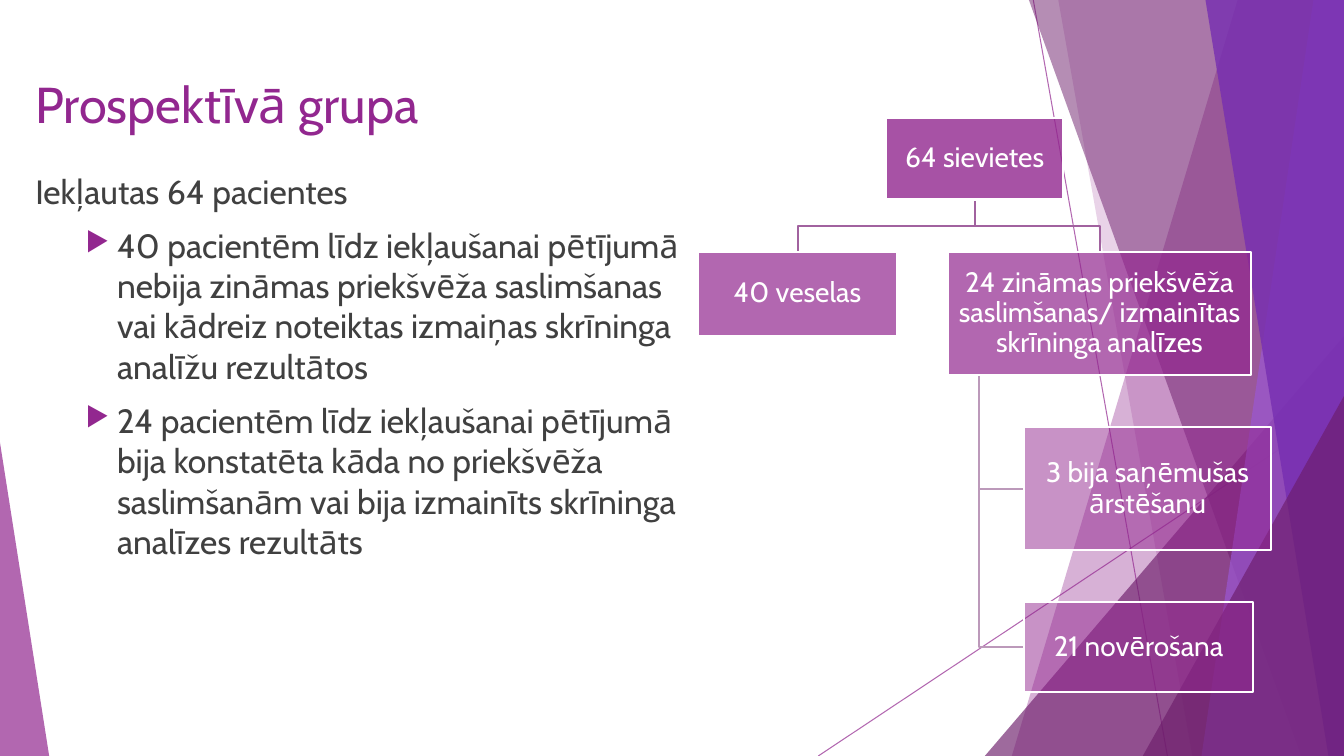
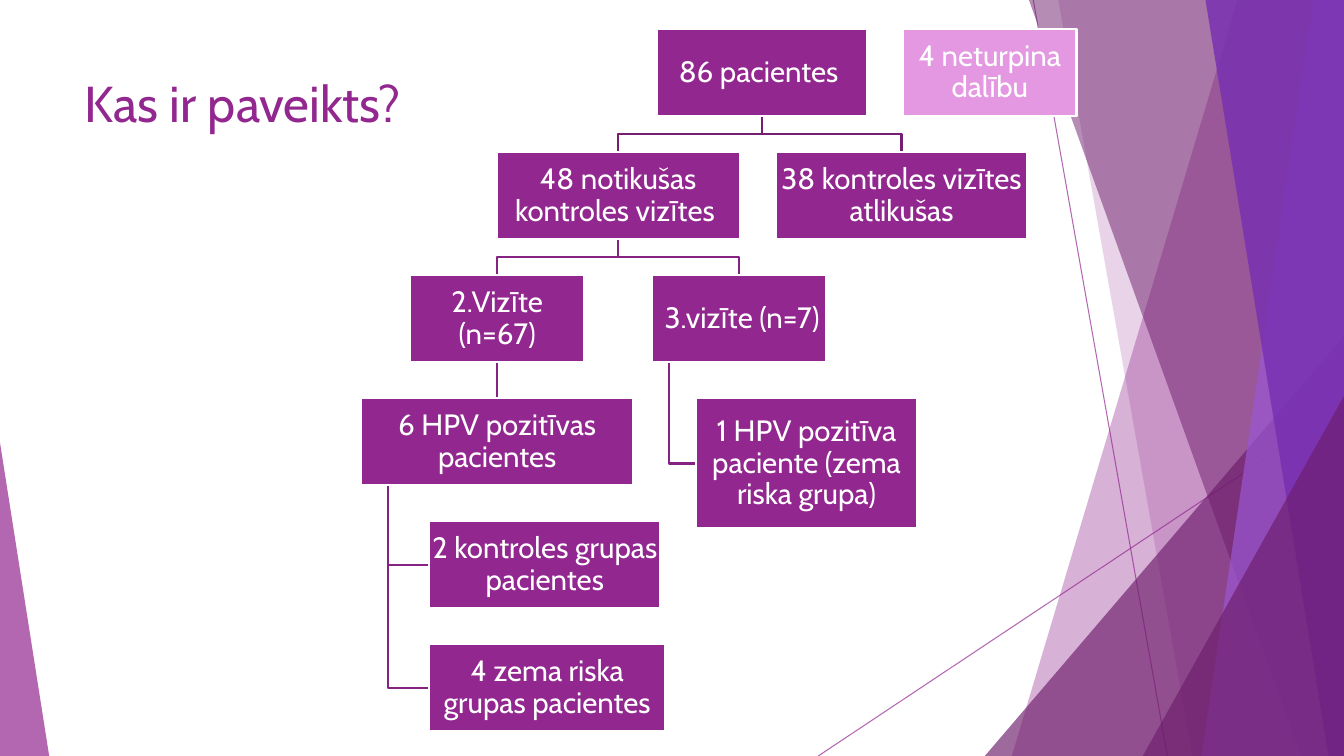
from dataclasses import dataclass
from typing import Optional

from lxml.etree import SubElement
from pptx import Presentation
from pptx.dml.color import RGBColor
from pptx.enum.shapes import MSO_CONNECTOR, MSO_SHAPE
from pptx.enum.text import MSO_ANCHOR, PP_ALIGN
from pptx.oxml.ns import qn
from pptx.util import Cm, Pt

FONT = "Cabin"
PURPLE, DARK, VIOLET, INDIGO = "92278F", "6D1D6B", "9B57D3", "762EB1"
PINK, WHITE, GREY = "E498E1", "FFFFFF", "404040"
WIDTH, HEIGHT = 33.87, 19.05


@dataclass
class Band:
    """A facet that runs from the top edge to the bottom along the right side."""
    top_x: float
    bottom_x: float
    color: str
    alpha: int


@dataclass
class Corner:
    """A right triangle standing on the bottom edge."""
    left: float
    top: float
    width: float
    apex: float
    color: str
    alpha: int


@dataclass
class Box:
    text: str
    left: float
    top: float
    width: float
    height: float
    color: str = PURPLE
    alpha: int = 100
    parent: Optional["Box"] = None
    link: str = ""
    hangs: bool = False

    @property
    def center(self) -> float:
        return self.left + self.width / 2

    @property
    def bottom(self) -> float:
        return self.top + self.height


FACETS = [
    Band(31.19, 25.5, PURPLE, 36),
    Band(26.67, 30.05, PURPLE, 20),
    Corner(24.82, 8.47, 9.05, 1, DARK, 66),
    Band(25.93, 32.79, DARK, 50),
    Band(33.1, 30.28, VIOLET, 70),
    Band(30.38, 33.48, INDIGO, 80),
    Corner(28.8, 9.98, 5.07, 1, DARK, 66),
    Corner(0, 11.15, 1.24, 0, PURPLE, 70),
]


# Shared helpers
def rgb(color: str) -> RGBColor:
    return RGBColor.from_string(color)


def fade(sp, alpha: int) -> None:
    if alpha < 100:
        clr = sp.element.xpath(".//a:srgbClr")[0]
        SubElement(clr, qn("a:alpha")).set("val", str(alpha * 1000))


def fill(sp, color: str, alpha: int) -> None:
    sp.shadow.inherit = False
    sp.fill.solid()
    sp.fill.fore_color.rgb = rgb(color)
    fade(sp, alpha)


def add_run(p, text: str, size: float, color: str) -> None:
    r = p.add_run()
    r.text = text
    r.font.name, r.font.size = FONT, Pt(size)
    r.font.color.rgb = rgb(color)


def add_line(s, x1: float, y1: float, x2: float, y2: float,
             color: str, width: float, alpha: int = 100) -> None:
    ln = s.shapes.add_connector(MSO_CONNECTOR.STRAIGHT, Cm(x1), Cm(y1), Cm(x2), Cm(y2))
    ln.line.color.rgb = rgb(color)
    ln.line.width = Pt(width)
    fade(ln, alpha)
    SubElement(ln.element.spPr, qn("a:effectLst"))


def add_path(s, points: list[tuple[float, float]], close: bool):
    pts = [(Cm(x), Cm(y)) for x, y in points]
    fb = s.shapes.build_freeform(*pts[0])
    fb.add_line_segments(pts[1:], close=close)
    return fb.convert_to_shape()


def add_textbox(s, left: float, top: float, width: float, height: float):
    tf = s.shapes.add_textbox(Cm(left), Cm(top), Cm(width), Cm(height)).text_frame
    tf.word_wrap = True
    return tf


# Backdrop and title
def add_backdrop(s) -> None:
    add_line(s, 26.04, 0, 29.42, HEIGHT, PURPLE, 0.75, 70)
    add_line(s, WIDTH, 10.24, 20.62, HEIGHT, PURPLE, 0.75, 70)
    for f in FACETS:
        if isinstance(f, Band):
            sp = add_path(s, [(f.top_x, 0), (WIDTH, 0), (WIDTH, HEIGHT),
                              (f.bottom_x, HEIGHT)], True)
        else:
            sp = s.shapes.add_shape(MSO_SHAPE.ISOSCELES_TRIANGLE, Cm(f.left), Cm(f.top),
                                    Cm(f.width), Cm(HEIGHT - f.top))
            sp.adjustments[0] = f.apex
        fill(sp, f.color, f.alpha)
        sp.line.fill.background()


def add_slide(prs, title: str, left: float, top: float, width: float):
    s = prs.slides.add_slide(prs.slide_layouts[6])
    add_backdrop(s)
    tf = add_textbox(s, left, top, width, 3.66)
    add_run(tf.paragraphs[0], title, 36, PURPLE)
    return s


# Body text
def add_bullet(p) -> None:
    pPr = p._p.get_or_add_pPr()
    pPr.set("marL", str(Cm(2.06)))
    pPr.set("indent", str(Cm(-0.79)))
    clr = SubElement(pPr, qn("a:buClr"))
    SubElement(clr, qn("a:srgbClr")).set("val", PURPLE)
    SubElement(pPr, qn("a:buSzPct")).set("val", "80000")
    SubElement(pPr, qn("a:buChar")).set("char", "▶")


def add_body(s, lead: str, bullets: list[str]) -> None:
    tf = add_textbox(s, 0.64, 4.17, 16.71, 13.16)
    for i, text in enumerate([lead] + bullets):
        p = tf.add_paragraph() if i else tf.paragraphs[0]
        p.space_before = Pt(10)
        if i:
            add_bullet(p)
        add_run(p, text, 24, GREY)


# Organisation chart
def add_link(s, box: Box) -> None:
    up = box.parent
    if box.hangs:
        x, y = up.left + up.width / 10, box.top + box.height / 2
        points = [(x, up.bottom), (x, y), (box.left, y)]
    elif abs(up.center - box.center) < 0.05:
        add_line(s, up.center, up.bottom, up.center, box.top, box.link, 1.5)
        return
    else:
        y = (up.bottom + box.top) / 2
        points = [(up.center, up.bottom), (up.center, y), (box.center, y),
                  (box.center, box.top)]
    sp = add_path(s, points, False)
    sp.shadow.inherit = False
    sp.fill.background()
    sp.line.color.rgb = rgb(box.link)
    sp.line.width = Pt(1.5)


def add_box(s, box: Box, size: float) -> None:
    sp = s.shapes.add_shape(MSO_SHAPE.RECTANGLE, Cm(box.left), Cm(box.top),
                            Cm(box.width), Cm(box.height))
    fill(sp, box.color, box.alpha)
    sp.line.color.rgb = rgb(WHITE)
    sp.line.width = Pt(1.5)
    tf = sp.text_frame
    tf.word_wrap = True
    tf.vertical_anchor = MSO_ANCHOR.MIDDLE
    tf.margin_left = tf.margin_right = tf.margin_top = tf.margin_bottom = Cm(0.03)
    p = tf.paragraphs[0]
    p.alignment = PP_ALIGN.CENTER
    p.line_spacing = 0.9
    add_run(p, box.text, size, WHITE)


def add_tree(s, boxes: list[Box], size: float) -> None:
    for box in boxes:
        if box.parent:
            add_link(s, box)
    for box in boxes:
        add_box(s, box, size)


# Slides
def group_slide(prs) -> None:
    s = add_slide(prs, "Prospektīvā grupa", 0.64, 1.73, 29.21)
    add_body(s, "Iekļautas 64 pacientes", [
        "40 pacientēm līdz iekļaušanai pētījumā nebija zināmas priekšvēža saslimšanas "
        "vai kādreiz noteiktas izmaiņas skrīninga analīžu rezultātos",
        "24 pacientēm līdz iekļaušanai pētījumā bija konstatēta kāda no priekšvēža "
        "saslimšanām vai bija izmainīts skrīninga analīzes rezultāts",
    ])
    mid, pale = "A1629F", "BC99BA"
    women = Box("64 sievietes", 22.33, 2.97, 4.47, 2.06, alpha=80)
    healthy = Box("40 veselas", 17.6, 6.35, 5, 2.11, alpha=70, parent=women, link=mid)
    known = Box("24 zināmas priekšvēža saslimšanas/ izmainītas skrīninga analīzes",
                23.9, 6.35, 7.62, 3.1, alpha=70, parent=women, link=mid)
    treated = Box("3 bija saņēmušas ārstēšanu", 25.81, 10.77, 6.22, 3.1, alpha=50,
                  parent=known, link=pale, hangs=True)
    observed = Box("21 novērošana", 25.81, 15.16, 5.77, 2.29, alpha=50,
                   parent=known, link=pale, hangs=True)
    add_tree(s, [women, healthy, known, treated, observed], 20)


def progress_slide(prs) -> None:
    s = add_slide(prs, "Kas ir paveikts?", 1.88, 1.7, 23.88)
    upper, lower = "751F73", "852382"

    def node(text: str, row: int, left: float, width: float,
             parent: Optional[Box] = None, hangs: bool = False,
             height: float = 2.18, color: str = PURPLE) -> Box:
        return Box(text, left, 0.74 + 3.1 * row, width, height, color, parent=parent,
                   link=upper if row == 1 else lower, hangs=hangs)

    patients = node("86 pacientes ", 0, 16.56, 5.28)
    done = node("48 notikušas kontroles vizītes ", 1, 12.52, 6.12, patients)
    second = node("2.Vizīte (n=67)", 2, 10.34, 4.38, done)
    positive = node("6 HPV pozitīvas pacientes", 3, 9.1, 6.86, second)
    third = node(" 3.vizīte (n=7)", 2, 16.43, 4.38, done)
    add_tree(s, [
        patients, done, second, positive,
        node("2 kontroles grupas pacientes", 4, 10.82, 5.82, positive, True),
        node("4 zema riska grupas pacientes", 5, 10.82, 5.94, positive, True),
        third,
        node("1 HPV pozitīva paciente (zema riska grupa)", 3, 17.53, 5.59, third, True, 3.28),
        node("38 kontroles vizītes atlikušas", 1, 19.56, 6.32, patients),
        node("4 neturpina dalību", 0, 22.76, 4.37, color=PINK),
    ], 21)


def main() -> None:
    prs = Presentation()
    prs.slide_width, prs.slide_height = Cm(WIDTH), Cm(HEIGHT)
    group_slide(prs)
    progress_slide(prs)
    prs.save("out.pptx")


if __name__ == "__main__":
    main()
